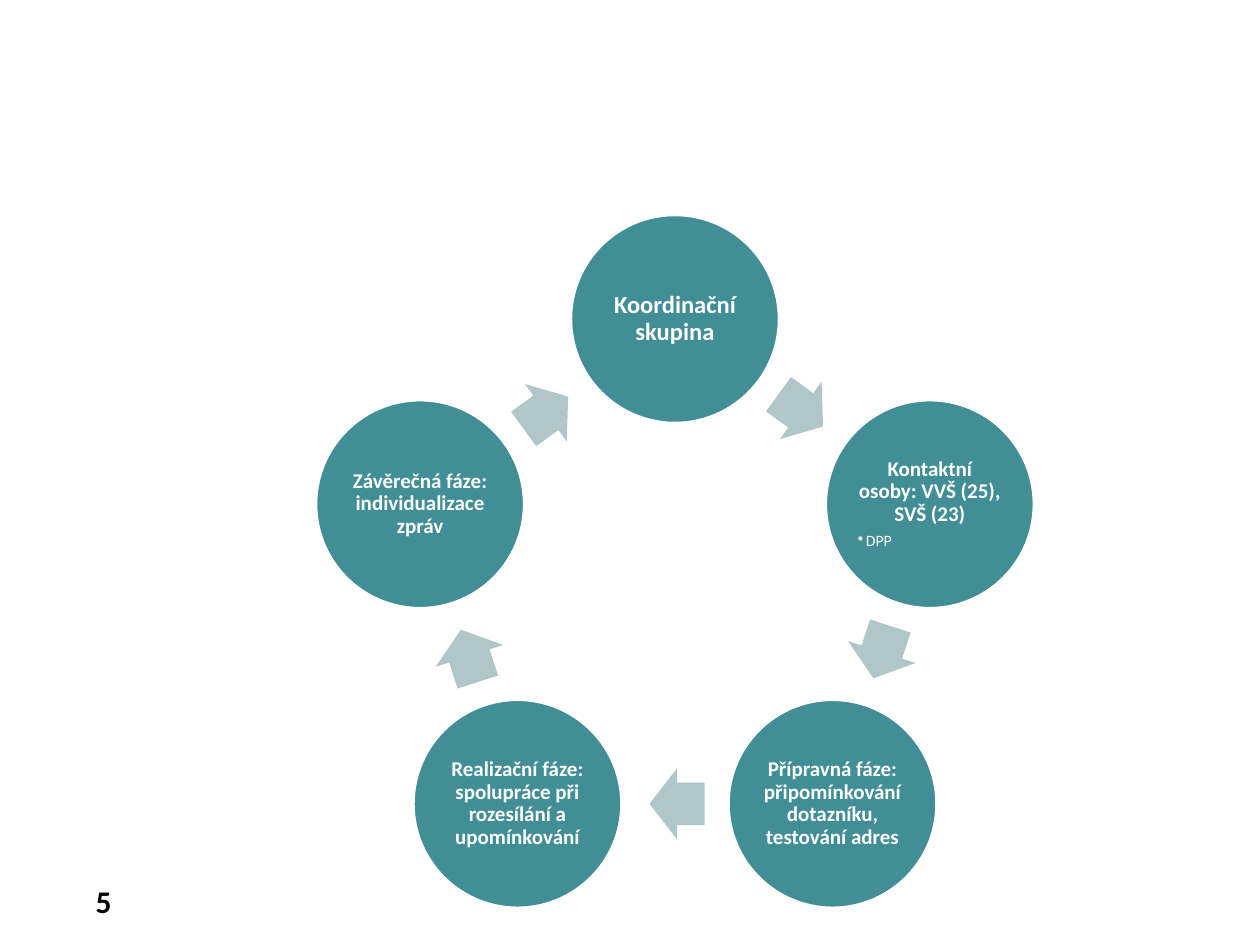
"""Build a slide with a five-step cycle of circles and arrows."""
import math

from lxml import etree
from pptx import Presentation
from pptx import util as u
from pptx.dml.color import RGBColor
from pptx.enum import shapes, text
from pptx.oxml.ns import qn

PX = 914400 // 126
COLORS = {"circle": "418E96", "arrow": "B0C6C9", "white": "FFFFFF", "number": "000000"}
CENTER_X, CENTER_Y, RING = 675, 587, 268
CIRCLE, ARROW_WIDTH, ARROW_HEIGHT, ARROW_SETBACK = 209, 55, 71, 2
STEPS = [
    ("Koordinační skupina", 14, None),
    ("Kontaktní osoby: VVŠ (25), SVŠ (23)", 12, "DPP"),
    ("Přípravná fáze: připomínkování dotazníku, testování adres", 12, None),
    ("Realizační fáze: spolupráce při rozesílání a upomínkování", 12, None),
    ("Závěrečná fáze: individualizace zpráv", 12, None),
]


def add_centered(kind, x, y, width, height, color):
    shape = slide.shapes.add_shape(
        kind, round((x - width / 2) * PX), round((y - height / 2) * PX), width * PX, height * PX)
    shape.shadow.inherit = False
    shape.fill.solid()
    shape.fill.fore_color.rgb = RGBColor.from_string(COLORS[color])
    shape.line.fill.background()
    return shape


def add_run(paragraph, wording, size, color, bold):
    run = paragraph.add_run()
    run.text = wording
    run.font.name = "Calibri"
    run.font.size = u.Pt(size)
    run.font.bold = bold
    run.font.color.rgb = RGBColor.from_string(COLORS[color])


presentation = Presentation()
presentation.slide_width, presentation.slide_height = 1260 * PX, 945 * PX
slide = presentation.slides.add_slide(presentation.slide_layouts[6])

number = slide.shapes.add_textbox(35 * PX, 876 * PX, 89 * PX, 50 * PX)
number.text_frame.word_wrap = True
paragraph = number.text_frame.paragraphs[0]
paragraph.alignment = text.PP_ALIGN.RIGHT
add_run(paragraph, "5", 18, "number", True)

for index, (label, size, detail) in enumerate(STEPS):
    angle = math.radians(72 * index)
    circle = add_centered(
        shapes.MSO_SHAPE.OVAL, CENTER_X + RING * math.sin(angle),
        CENTER_Y - RING * math.cos(angle), CIRCLE, CIRCLE, "circle")
    circle.line.color.rgb = RGBColor.from_string(COLORS["white"])
    circle.line.width = u.Pt(2)
    frame = circle.text_frame
    frame.word_wrap = True
    frame.vertical_anchor = text.MSO_ANCHOR.MIDDLE
    frame.margin_left = frame.margin_right = frame.margin_top = frame.margin_bottom = 2 * PX
    paragraph = frame.paragraphs[0]
    paragraph.alignment = text.PP_ALIGN.CENTER
    paragraph.line_spacing = 0.9
    add_run(paragraph, label, size, "white", True)
    if detail:
        paragraph.space_after = u.Pt(4)
        paragraph = frame.add_paragraph()
        paragraph.level = 1
        paragraph.alignment = text.PP_ALIGN.LEFT
        properties = paragraph._p.get_or_add_pPr()
        properties.set("marL", str(8 * PX))
        properties.set("indent", str(-8 * PX))
        etree.SubElement(properties, qn("a:buChar")).set("char", "•")
        paragraph.line_spacing = 0.9
        add_run(paragraph, detail, 9, "white", False)

    turn = 72 * index + 36
    angle = math.radians(turn)
    distance = RING * math.cos(math.radians(36))
    arrow = add_centered(
        shapes.MSO_SHAPE.RIGHT_ARROW,
        CENTER_X + distance * math.sin(angle) - ARROW_SETBACK * math.cos(angle),
        CENTER_Y - distance * math.cos(angle) - ARROW_SETBACK * math.sin(angle),
        ARROW_WIDTH, ARROW_HEIGHT, "arrow")
    arrow.rotation = turn
    arrow.adjustments[0] = 0.6
    arrow.adjustments[1] = 0.5

presentation.save("out.pptx")
